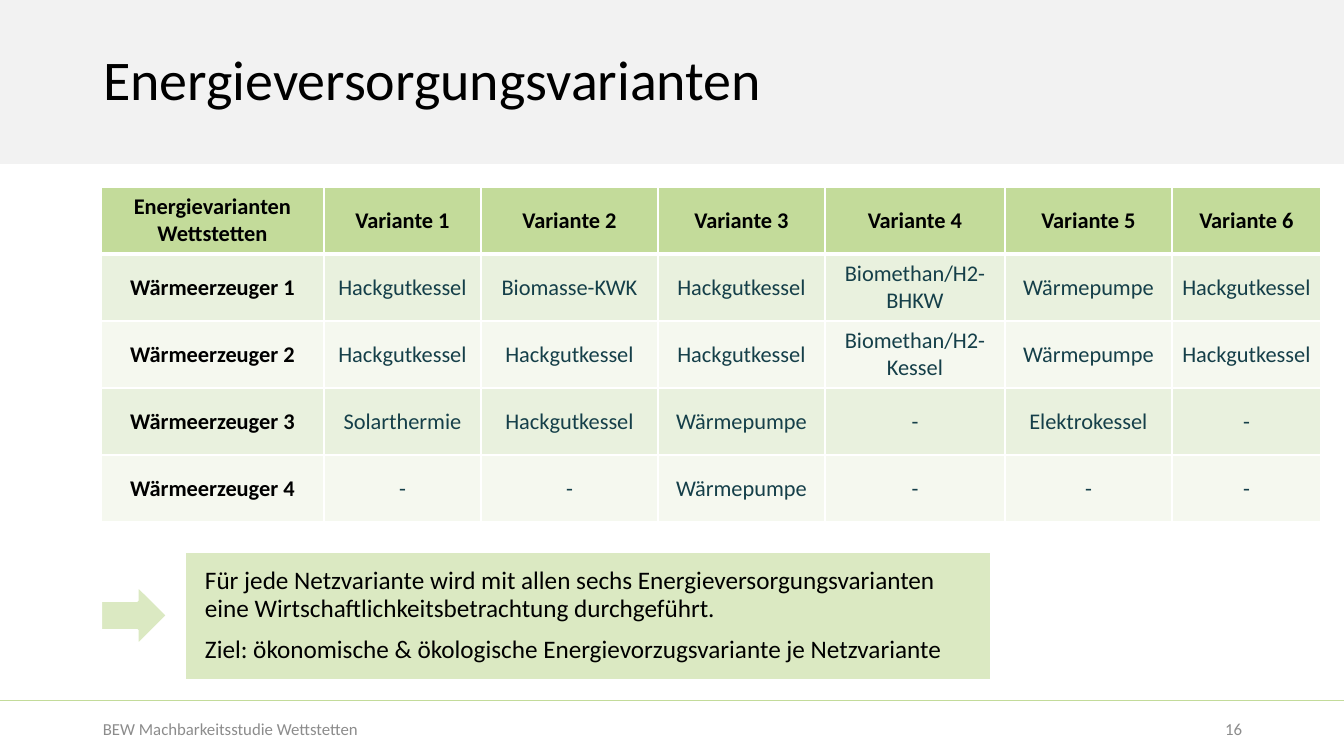
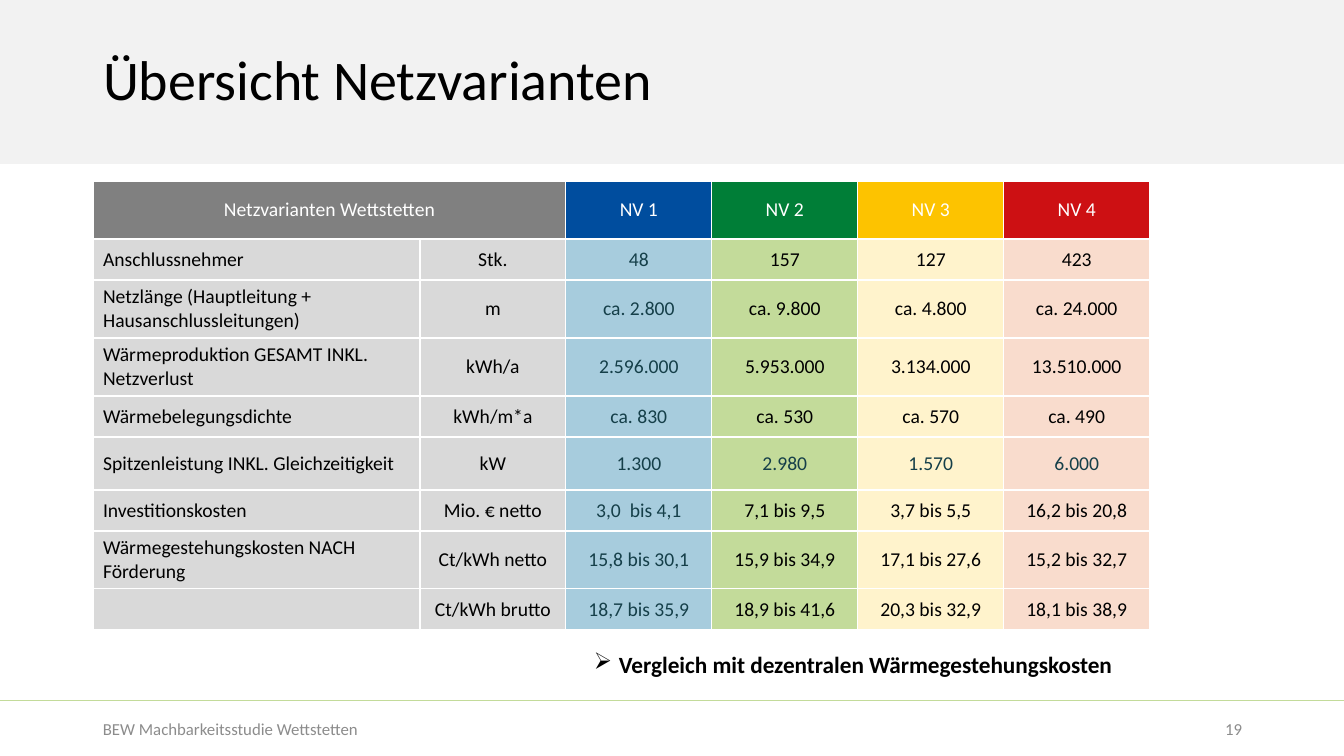
from lxml.etree import SubElement
from pptx import Presentation
from pptx.dml.color import RGBColor
from pptx.enum.shapes import MSO_CONNECTOR, MSO_SHAPE
from pptx.enum.text import MSO_ANCHOR, MSO_AUTO_SIZE, PP_ALIGN
from pptx.oxml.ns import qn
from pptx.util import Emu, Pt

WIDTH, HEIGHT = 1344, 756
EMU_PER_PX = 914400 / 100.8
FONT = "Calibri"
BLACK, WHITE, TEAL = "000000", "FFFFFF", "153F49"
BAND, GREEN, PALE_GREEN = "F2F2F2", "C3DB9A", "DBE9C2"
FOOTER_GREY, HEAD_GREY, LABEL_GREY = "8C8C8C", "808080", "D9D9D9"
STRIPES = ["E9F1DE", "F5F8EF"]

FOOTER = "BEW Machbarkeitsstudie Wettstetten"

# "\n" starts a paragraph, "\v" breaks a line
SUPPLY = {
    "title": "Energieversorgungsvarianten",
    "page": "16",
    "columns": [223, 157, 177, 167, 180, 167, 149],
    "row_height": 67,
    "rows": [
        ["Energievarianten\nWettstetten", *[f"Variante {n}" for n in range(1, 7)]],
        ["Wärmeerzeuger 1", "Hackgutkessel", "Biomasse-KWK", "Hackgutkessel",
         "Biomethan/H2-\nBHKW", "Wärmepumpe", "Hackgutkessel"],
        ["Wärmeerzeuger 2", "Hackgutkessel", "Hackgutkessel", "Hackgutkessel",
         "Biomethan/H2-\nKessel", "Wärmepumpe", "Hackgutkessel"],
        ["Wärmeerzeuger 3", "Solarthermie", "Hackgutkessel", "Wärmepumpe",
         "-", "Elektrokessel", "-"],
        ["Wärmeerzeuger 4", "-", "-", "Wärmepumpe", "-", "-", "-"],
    ],
    "conclusion": "Für jede Netzvariante wird mit allen sechs Energieversorgungsvarianten"
                  "\veine Wirtschaftlichkeitsbetrachtung durchgeführt."
                  "\nZiel: ökonomische & ökologische Energievorzugsvariante je Netzvariante",
}

NETWORKS = {
    "title": "Übersicht Netzvarianten",
    "page": "19",
    "columns": [327, *[146] * 5],
    "row_heights": [58, 41, 58, 58, 41, 53, 41, 58, 41],
    "head_fills": [HEAD_GREY, HEAD_GREY, "004D9E", "007E37", "FDC300", "CD1013"],
    "column_fills": [LABEL_GREY, LABEL_GREY, "A7CCDD", GREEN, "FFF3CC", "F9DCCD"],
    "peak_row": 5,
    "rows": [
        ["Netzvarianten Wettstetten", "", "NV 1", "NV 2", "NV 3", "NV 4"],
        ["Anschlussnehmer", "Stk.", "48", "157", "127", "423"],
        ["Netzlänge (Hauptleitung + Hausanschlussleitungen)", "m",
         "ca. 2.800", "ca. 9.800", "ca. 4.800", "ca. 24.000"],
        ["Wärmeproduktion GESAMT INKL. Netzverlust", "kWh/a",
         "2.596.000", "5.953.000", "3.134.000", "13.510.000"],
        ["Wärmebelegungsdichte", "kWh/m*a", "ca. 830", "ca. 530", "ca. 570", "ca. 490"],
        ["Spitzenleistung INKL. Gleichzeitigkeit", "kW", "1.300", "2.980", "1.570", "6.000"],
        ["Investitionskosten", "Mio. € netto",
         "3,0  bis 4,1", "7,1 bis 9,5", "3,7 bis 5,5", "16,2 bis 20,8"],
        ["Wärmegestehungskosten NACH Förderung", "Ct/kWh netto",
         "15,8 bis 30,1", "15,9 bis 34,9", "17,1 bis 27,6", "15,2 bis 32,7"],
        ["", "Ct/kWh brutto",
         "18,7 bis 35,9", "18,9 bis 41,6", "20,3 bis 32,9", "18,1 bis 38,9"],
    ],
    "conclusion": "Vergleich mit dezentralen Wärmegestehungskosten",
}


def px(length):
    return Emu(round(length * EMU_PER_PX))


def box(*lengths):
    return [px(length) for length in lengths]


def color(value):
    return RGBColor.from_string(value)


def write(frame, text, size, ink=BLACK, bold=False, align=PP_ALIGN.LEFT,
          spacing=None, before=0, bullet=None, indent=25):
    frame.word_wrap = True
    for number, line in enumerate(text.split("\n")):
        paragraph = frame.add_paragraph() if number else frame.paragraphs[0]
        paragraph.text = line
        paragraph.alignment = align
        if spacing:
            paragraph.line_spacing = spacing
        if number and before:
            paragraph.space_before = Pt(before)
        if bullet:
            properties = paragraph._p.get_or_add_pPr()
            properties.set("marL", str(px(indent)))
            properties.set("indent", str(-px(indent)))
            SubElement(properties, qn("a:buChar")).set("char", bullet)
        for run in paragraph.runs:
            run.font.name = FONT
            run.font.size = Pt(size)
            run.font.bold = bold
            run.font.color.rgb = color(ink)


def add_block(slide, preset, place, fill, outline=None):
    block = slide.shapes.add_shape(preset, *box(*place))
    block.shadow.inherit = False
    block.fill.solid()
    block.fill.fore_color.rgb = color(fill)
    if outline:
        block.line.color.rgb = color(outline)
        block.line.width = Pt(1.5)
    else:
        block.line.fill.background()
    return block


def decorate_layout(layout, slide):
    """Draw band and footer rule on the slide, then move them to its layout."""
    band = add_block(slide, MSO_SHAPE.RECTANGLE, (0, 0, WIDTH, 164), BAND)
    rule = slide.shapes.add_connector(MSO_CONNECTOR.STRAIGHT, *box(0, 700, WIDTH, 700))
    rule.line.color.rgb = color(GREEN)
    rule.line.width = Pt(0.5)
    SubElement(rule.element.spPr, qn("a:effectLst"))
    for position, part in enumerate((band, rule), start=2):
        layout.shapes.element.insert(position, part.element)


def add_slide(deck, layout, content):
    slide = deck.slides.add_slide(layout)
    title = slide.shapes.title
    title.left, title.top, title.width, title.height = box(93, 9, 1159, 146)
    title.text_frame.auto_size = MSO_AUTO_SIZE.NONE
    title.text_frame.vertical_anchor = MSO_ANCHOR.MIDDLE
    write(title.text_frame, content["title"], 40, spacing=0.9)
    for text, left, width, align in [(FOOTER, 93, 806, PP_ALIGN.LEFT),
                                     (content["page"], 1160, 92, PP_ALIGN.RIGHT)]:
        frame = slide.shapes.add_textbox(*box(left, 709, width, 40)).text_frame
        frame.vertical_anchor = MSO_ANCHOR.MIDDLE
        write(frame, text, 12, FOOTER_GREY, align=align)
    return slide


def set_borders(cell, top, bottom):
    properties = cell._tc.get_or_add_tcPr()
    for side, points in [("L", 1), ("R", 1), ("T", top), ("B", bottom)]:
        line = SubElement(properties, qn(f"a:ln{side}"))
        line.set("w", str(Pt(points)))
        SubElement(SubElement(line, qn("a:solidFill")), qn("a:srgbClr")).set("val", WHITE)


def add_grid(slide, left, top, columns, heights, rows, style, head_rule=1):
    """Add a table; style(row, column) gives the fill and the text format."""
    place = box(left, top, sum(columns), sum(heights))
    table = slide.shapes.add_table(len(rows), len(columns), *place).table
    table.first_row = table.horz_banding = False
    for column, width in zip(table.columns, columns):
        column.width = px(width)
    for r, (row, height) in enumerate(zip(rows, heights)):
        table.rows[r].height = px(height)
        for c, text in enumerate(row):
            cell = table.cell(r, c)
            fill, text_format = style(r, c)
            set_borders(cell, head_rule if r == 1 else 1, head_rule if r == 0 else 1)
            cell.fill.solid()
            cell.fill.fore_color.rgb = color(fill)
            cell.vertical_anchor = MSO_ANCHOR.MIDDLE
            write(cell.text_frame, text, **text_format)
    return table


def supply_style(row, column):
    is_heading = row == 0 or column == 0
    fill = STRIPES[(row - 1) % 2] if row else GREEN
    return fill, dict(size=16, bold=is_heading, align=PP_ALIGN.CENTER,
                      ink=BLACK if is_heading else TEAL)


def network_style(row, column):
    if row == 0:
        return NETWORKS["head_fills"][column], dict(size=14, ink=WHITE, align=PP_ALIGN.CENTER)
    is_teal = column == 2 or (row == NETWORKS["peak_row"] and column > 2)
    return NETWORKS["column_fills"][column], dict(
        size=14, ink=TEAL if is_teal else BLACK,
        align=PP_ALIGN.CENTER if column else PP_ALIGN.LEFT)


def fill_supply(slide):
    rows = SUPPLY["rows"]
    add_grid(slide, 101, 187, SUPPLY["columns"], [SUPPLY["row_height"]] * len(rows),
             rows, supply_style, head_rule=3)
    conclusion = add_block(slide, MSO_SHAPE.RECTANGLE, (185, 552, 806, 128), PALE_GREEN, WHITE)
    frame = conclusion.text_frame
    frame.margin_left, frame.margin_top, frame.margin_right, frame.margin_bottom = box(
        20, 16, 10, 16)
    frame.vertical_anchor = MSO_ANCHOR.TOP
    write(frame, SUPPLY["conclusion"], 18, spacing=0.9, before=10)
    add_block(slide, MSO_SHAPE.RIGHT_ARROW, (101, 586, 66, 59), PALE_GREEN, WHITE)


def fill_networks(slide):
    table = add_grid(slide, 93, 181, NETWORKS["columns"], NETWORKS["row_heights"],
                     NETWORKS["rows"], network_style)
    table.cell(0, 0).merge(table.cell(0, 1))
    conclusion = add_block(slide, MSO_SHAPE.RECTANGLE, (584, 648, 577, 40), WHITE)
    conclusion.text_frame.vertical_anchor = MSO_ANCHOR.TOP
    write(conclusion.text_frame, NETWORKS["conclusion"], 16.6, bold=True,
          spacing=0.9, bullet="➢")


def main():
    deck = Presentation()
    deck.slide_width, deck.slide_height = box(WIDTH, HEIGHT)
    layout = deck.slide_layouts[5]
    supply_slide = add_slide(deck, layout, SUPPLY)
    decorate_layout(layout, supply_slide)
    fill_supply(supply_slide)
    fill_networks(add_slide(deck, layout, NETWORKS))
    deck.save("out.pptx")


if __name__ == "__main__":
    main()
